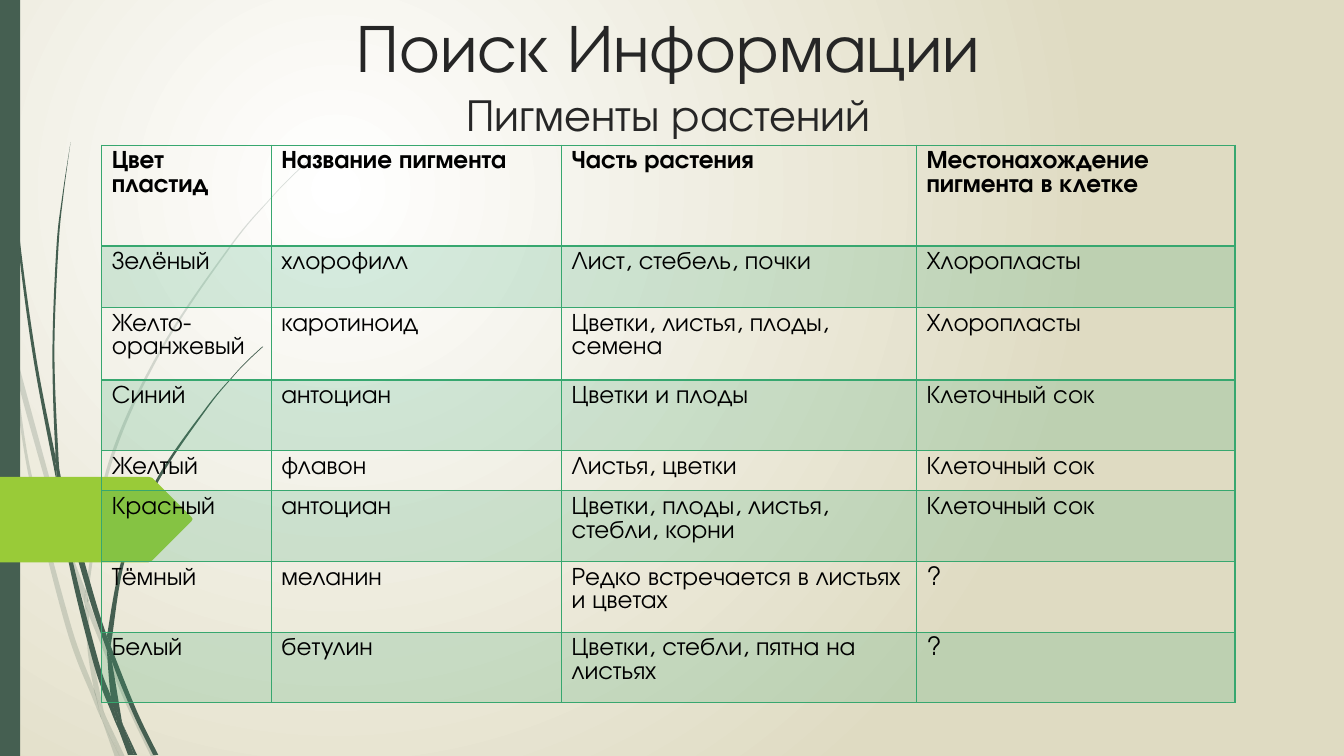
from lxml import etree
from pptx import Presentation
from pptx.dml.color import RGBColor
from pptx.enum.shapes import MSO_SHAPE
from pptx.enum.text import MSO_ANCHOR, PP_ALIGN
from pptx.oxml.ns import qn
from pptx.util import Inches, Pt

RECTANGLE = MSO_SHAPE.RECTANGLE
TOP, BOTTOM = MSO_ANCHOR.TOP, MSO_ANCHOR.BOTTOM
LEFT, CENTER = PP_ALIGN.LEFT, PP_ALIGN.CENTER

WHITE = RGBColor(0xFF, 0xFF, 0xFF)
SAND = RGBColor(0xDF, 0xDB, 0xC2)
FOREST = RGBColor(0x45, 0x5F, 0x51)
LIME = RGBColor(0x99, 0xCB, 0x38)
EMERALD = RGBColor(0x37, 0xA7, 0x6F)
INK = RGBColor(0x26, 0x26, 0x26)
BLACK = RGBColor(0, 0, 0)
FONT = "TeX Gyre Adventor"

# Each blade has two edges, one up and one back, as points in inches.
PALE_BLADES = [
    ([(0.11, 3.5), (0.09, 3.22), (0, 2.82)], [(0, 2.99), (0.1, 3.44)]),
    ([(0.84, 5.99), (0.58, 5.22), (0.17, 3.76), (0.14, 3.45)], [(0.14, 3.45), (0.62, 5.2), (0.85, 5.86)]),
    ([(1.5, 7.51), (1.23, 6.94), (0.88, 6.1)], [(0.88, 5.96), (0.92, 6.07), (1.27, 6.92), (1.55, 7.51)]),
    ([(1.19, 7.51), (1.05, 7.11)], [(1.24, 7.51)]),
    ([(1.01, 7.14), (0.92, 6.93), (0.65, 6.21), (0.28, 4.7), (0.11, 3.5)],
     [(0.17, 3.76), (0.31, 4.69), (0.7, 6.19), (0.93, 6.83), (0.99, 7.07)]),
    ([(0.84, 5.99), (0.87, 6.46), (0.93, 6.83), (0.96, 6.92), (1.05, 7.11)],
     [(1.03, 7.06), (0.91, 6.46), (0.88, 6.1), (0.88, 6.08)]),
    ([(0.88, 5.96), (0.88, 5.84), (1.1, 4.62), (1.6, 3.49), (2.29, 2.45), (2.68, 1.98), (2.9, 1.75), (3.12, 1.54)],
     [(3.12, 1.53), (2.89, 1.75), (2.68, 1.97), (2.28, 2.44), (1.58, 3.48), (1.07, 4.61), (0.85, 5.84), (0.85, 5.86)]),
    ([(1.01, 7.14), (1.14, 7.51)], [(1.19, 7.51)]),
    ([(0.88, 6.1), (0.88, 5.96)], [(0.85, 5.86), (0.84, 5.99), (0.88, 6.08)]),
    ([(0.93, 6.83), (0.99, 7.07), (1.01, 7.14), (1.19, 7.51)], [(1.05, 7.11), (0.96, 6.92)]),
]
DARK_BLADES = [
    ([(0.03, 0), (0.04, 0.48), (0.07, 1.1), (0.17, 2.33), (0.33, 3.55), (0.56, 4.77), (0.57, 4.81)],
     [(0.55, 4.57), (0.55, 4.53), (0.36, 3.55), (0.19, 2.32), (0.08, 1.09), (0.05, 0.48), (0.04, 0)]),
    ([(1.06, 6.45), (0.88, 5.92), (0.64, 5.05), (0.6, 4.72)], [(0.6, 4.72), (0.93, 5.9), (1.06, 6.31), (1.06, 6.33)]),
    ([(1.52, 7.49), (1.32, 7.08), (1.11, 6.56), (1.1, 6.41)], [(1.1, 6.41), (1.13, 6.49), (1.36, 7.06), (1.57, 7.49)]),
    ([(1.17, 7.22), (1.11, 7.08), (0.93, 6.59), (0.68, 5.57), (0.57, 4.77)],
     [(0.57, 4.77), (0.64, 5.05), (0.72, 5.56), (0.98, 6.57), (1.1, 6.91), (1.16, 7.17)]),
    ([(0.6, 4.72), (0.58, 4.53), (0.54, 3.49), (0.58, 2.45), (0.63, 1.93), (0.7, 1.41)],
     [(0.7, 1.41), (0.62, 1.93), (0.56, 2.45), (0.52, 3.49), (0.55, 4.49), (0.6, 4.72)]),
    ([(1.33, 7.49), (1.22, 7.19)], [(1.36, 7.49)]),
    ([(0.55, 4.49), (0.55, 4.53), (0.57, 4.77), (0.64, 5.05)], [(0.6, 4.72)]),
    ([(1.1, 6.41), (1.11, 6.33), (1.25, 5.52), (1.58, 4.76), (2.05, 4.06), (2.31, 3.74), (2.45, 3.59), (2.61, 3.44)],
     [(2.6, 3.44), (2.45, 3.58), (2.31, 3.73), (2.04, 4.05), (1.56, 4.74), (1.22, 5.51), (1.06, 6.31)]),
    ([(1.27, 7.49), (1.17, 7.22)], [(1.31, 7.49)]),
    ([(1.06, 6.45), (1.1, 6.91), (1.16, 7.06), (1.22, 7.19)], [(1.21, 7.16), (1.11, 6.56), (1.09, 6.51)]),
    ([(1.06, 6.45), (1.09, 6.51), (1.11, 6.56)], [(1.1, 6.41), (1.06, 6.31), (1.06, 6.33)]),
    ([(1.1, 6.91), (1.16, 7.17), (1.17, 7.22), (1.3, 7.49)], [(1.33, 7.49), (1.22, 7.19), (1.16, 7.06)]),
]
ARROW_OUTLINE = ([(0, 0)], [(1.47, 0)], [(1.51, 0.01)], [(1.9, 0.4)], [(1.91, 0.42)], [(1.9, 0.44)],
                 [(1.51, 0.83)], [(1.47, 0.85)], [(0, 0.85)])

COLUMN_WIDTHS = [1.68, 2.88, 3.52, 3.16]
ROW_HEIGHTS = [1, 0.61, 0.72, 0.7, 0.4, 0.7, 0.7, 0.7]
PIGMENTS = [
    ["Цвет пластид", "Название пигмента", "Часть растения", "Местонахождение пигмента в клетке"],
    ["Зелёный", "хлорофилл", "Лист, стебель, почки", "Хлоропласты"],
    ["Желто-\nоранжевый", "каротиноид", "Цветки, листья, плоды, семена", "Хлоропласты"],
    ["Синий", "антоциан", "Цветки и плоды", "Клеточный сок"],
    ["Желтый", "флавон", "Листья, цветки", "Клеточный сок"],
    ["Красный", "антоциан", "Цветки, плоды, листья, стебли, корни", "Клеточный сок"],
    ["Тёмный", "меланин", "Редко встречается в листьях и цветах", "?"],
    ["Белый", "бетулин", "Цветки, стебли, пятна на листьях", "?"],
]


def set_fill(item, color, opacity=100):
    item.fill.solid()
    item.fill.fore_color.rgb = color
    if opacity < 100:
        for color_element in item.fill._xPr.iter(qn("a:srgbClr")):
            etree.SubElement(color_element, qn("a:alpha"), val=str(opacity * 1000))


def finish_shape(shape, color, opacity=100):
    shape.shadow.inherit = False
    shape.line.fill.background()
    set_fill(shape, color, opacity)


def add_text(paragraph, text, size, color=BLACK, bold=False, align=LEFT):
    paragraph.alignment = align
    run = paragraph.add_run()
    run.text = text
    run.font.name, run.font.size, run.font.bold = FONT, Pt(size), bold
    run.font.color.rgb = color


def paint_background(slide):
    fill = slide.background.fill
    fill.gradient()
    for stop, color in zip(fill.gradient_stops, (WHITE, SAND)):
        stop.color.rgb = color
    gradient = slide.element.find(".//" + qn("a:gradFill"))
    gradient.remove(gradient.find(qn("a:lin")))
    circle = etree.SubElement(gradient, qn("a:path"), path="circle")
    etree.SubElement(circle, qn("a:fillToRect"), l="50000", t="50000", r="100000", b="100000")


def curve_segment(line, before, start, end, after):
    """Turn a straight segment into a Bézier curve that follows its neighbours."""
    first = [b + (c - a) / 6 for a, b, c in zip(before, start, end)]
    second = [c - (d - b) / 6 for b, c, d in zip(start, end, after)]
    line.tag = qn("a:cubicBezTo")
    for index, (x, y) in enumerate((first, second)):
        line.insert(index, etree.Element(qn("a:pt"), x=str(round(x)), y=str(round(y))))


def add_outline(slide, left, top, edges, color, opacity=100):
    """Draw a closed outline, curved within each edge and straight between edges."""
    points = [(Inches(left + x), Inches(top + y)) for edge in edges for x, y in edge]
    builder = slide.shapes.build_freeform(*points[0])
    builder.add_line_segments(points[1:])
    shape = builder.convert_to_shape()
    finish_shape(shape, color, opacity)
    nodes = list(shape.element.find(".//" + qn("a:path")))
    local = [(x - shape.left, y - shape.top) for x, y in points]
    first = 0
    for edge in edges:
        last = first + len(edge) - 1
        for end in range(first + 1, last + 1):
            curve_segment(nodes[end], local[max(end - 2, first)], local[end - 1],
                          local[end], local[min(end + 1, last)])
        first = last + 1


def add_side_decoration(slide, left, top, height):
    for blades, opacity in ((PALE_BLADES, 20), (DARK_BLADES, 100)):
        for edges in blades:
            add_outline(slide, left, top, edges, FOREST, opacity)
    bar = slide.shapes.add_shape(RECTANGLE, Inches(left), Inches(top), Inches(0.2), Inches(height))
    finish_shape(bar, FOREST)
    add_outline(slide, left, top + 4.73, ARROW_OUTLINE, LIME)


def add_title(slide, left, top, width, height):
    frame = slide.shapes.add_textbox(Inches(left), Inches(top), Inches(width), Inches(height)).text_frame
    frame.word_wrap = True
    frame.vertical_anchor = BOTTOM
    paragraph = frame.paragraphs[0]
    add_text(paragraph, "Поиск Информации", 48.6, INK, align=CENTER)
    paragraph.add_line_break()
    add_text(paragraph, "Пигменты растений", 32.4, INK, align=CENTER)


def set_borders(cell, top_width, bottom_width):
    properties = cell._tc.get_or_add_tcPr()
    widths = {"lnL": 1, "lnR": 1, "lnT": top_width, "lnB": bottom_width}
    for index, (side, width) in enumerate(widths.items()):
        line = etree.Element(qn("a:" + side), w=str(Pt(width)))
        fill = etree.SubElement(line, qn("a:solidFill"))
        etree.SubElement(fill, qn("a:srgbClr"), val=str(EMERALD))
        properties.insert(index, line)


def add_pigment_table(slide, left, top, width, height):
    table = slide.shapes.add_table(len(PIGMENTS), len(COLUMN_WIDTHS), Inches(left), Inches(top),
                                   Inches(width), Inches(height)).table
    table.first_row = table.horz_banding = False
    for column, share in zip(table.columns, COLUMN_WIDTHS):
        column.width = Inches(width * share / sum(COLUMN_WIDTHS))
    for row_index, (row, share) in enumerate(zip(table.rows, ROW_HEIGHTS)):
        row.height = Inches(height * share / sum(ROW_HEIGHTS))
        for cell, text in zip(row.cells, PIGMENTS[row_index]):
            cell.vertical_anchor = TOP
            if row_index % 2:
                set_fill(cell, EMERALD, opacity=20)
            else:
                cell.fill.background()
            set_borders(cell, 2 if row_index == 1 else 1, 2 if row_index == 0 else 1)
            for line_index, line in enumerate(text.split("\n")):
                frame = cell.text_frame
                paragraph = frame.add_paragraph() if line_index else frame.paragraphs[0]
                add_text(paragraph, line, 18, bold=row_index == 0)


def main():
    presentation = Presentation()
    presentation.slide_width, presentation.slide_height = Inches(13.33), Inches(7.5)
    slide = presentation.slides.add_slide(presentation.slide_layouts[6])
    paint_background(slide)
    add_side_decoration(slide, 0, 0, 7.5)
    add_title(slide, 0.68, 0.18, 11.9, 1.26)
    add_pigment_table(slide, 1.01, 1.44, 11.24, 5.53)
    presentation.save("out.pptx")


if __name__ == "__main__":
    main()
